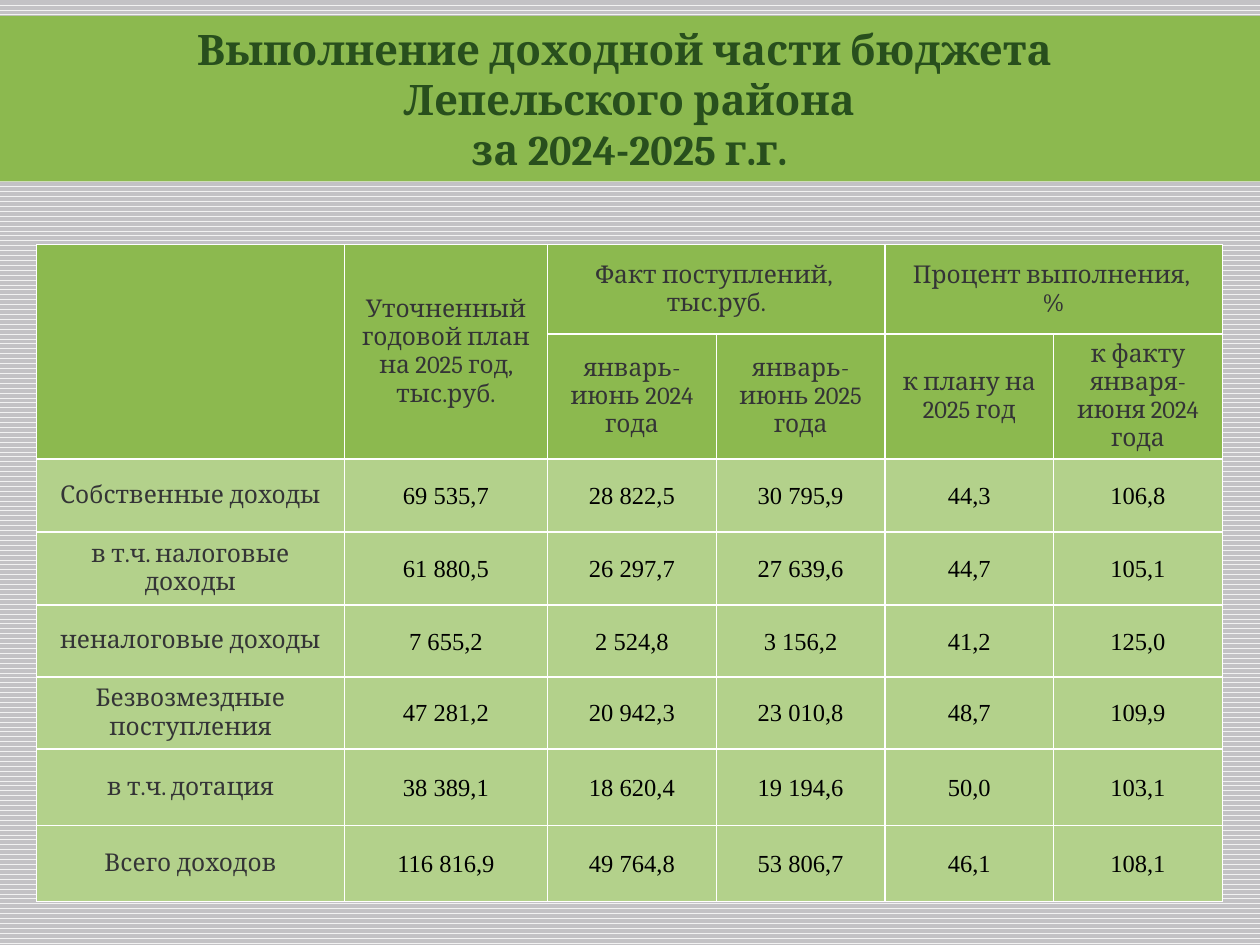
from pptx import Presentation
from pptx.dml.color import RGBColor
from pptx.enum.dml import MSO_PATTERN
from pptx.enum.shapes import MSO_SHAPE
from pptx.enum.text import MSO_ANCHOR, PP_ALIGN
from pptx.oxml import parse_xml
from pptx.oxml.ns import nsdecls
from pptx.util import Cm, Pt

GREEN = RGBColor(0x8C, 0xB9, 0x4F)
LIGHT_GREEN = RGBColor(0xB3, 0xD1, 0x8B)
DARK_GREEN = RGBColor(0x28, 0x4F, 0x1D)
GRAPHITE = RGBColor(0x34, 0x34, 0x36)
BLACK = RGBColor(0, 0, 0)
WHITE = RGBColor(0xFF, 0xFF, 0xFF)
PALE_GREY = RGBColor(0xF2, 0xF2, 0xF2)
GREY = RGBColor(0xC3, 0xC2, 0xC5)

TITLE_FONT = {"name": "Cambria", "size": Pt(24), "bold": True}
LABEL_FONT = {"name": "Cambria", "size": Pt(14), "bold": False}
NUMBER_FONT = {"name": "Times New Roman", "size": Pt(14), "bold": False}
NUMBER_MARGINS = {
    "margin_left": Cm(0.03),
    "margin_top": Cm(0.03),
    "margin_right": Cm(0.03),
    "margin_bottom": Cm(0),
}

TITLE = "Выполнение доходной части бюджета \nЛепельского района\nза 2024-2025 г.г."
HEADINGS = [
    (0, 0, 1, 0, ""),
    (0, 1, 1, 1, "Уточненный годовой план на 2025 год, тыс.руб."),
    (0, 2, 0, 3, "Факт поступлений, \nтыс.руб."),
    (0, 4, 0, 5, "Процент выполнения, \n%"),
    (1, 2, 1, 2, "январь-июнь 2024 года"),
    (1, 3, 1, 3, "январь-июнь 2025 года"),
    (1, 4, 1, 4, "к плану на 2025 год"),
    (1, 5, 1, 5, "к факту января-июня 2024 года"),
]
INCOME = [
    ("Собственные доходы", "69 535,7", "28 822,5", "30 795,9", "44,3", "106,8"),
    ("в т.ч. налоговые доходы", "61 880,5", "26 297,7", "27 639,6", "44,7", "105,1"),
    ("неналоговые доходы", "7 655,2", "2 524,8", "3 156,2", "41,2", "125,0"),
    ("Безвозмездные поступления", "47 281,2", "20 942,3", "23 010,8", "48,7", "109,9"),
    ("в т.ч. дотация", "38 389,1", "18 620,4", "19 194,6", "50,0", "103,1"),
    ("Всего доходов", "116 816,9", "49 764,8", "53 806,7", "46,1", "108,1"),
]
COLUMN_WIDTHS = [6.2, 4.1] + [3.4] * 4
ROW_HEIGHTS = [1.8, 2.39, 1.47, 1.47, 1.45, 1.45, 1.54, 1.54]


def apply(target, values):
    for key, value in values.items():
        setattr(target, key, value)


def write(frame, text, font, color):
    frame.text = text
    for paragraph in frame.paragraphs:
        paragraph.alignment = PP_ALIGN.CENTER
        for run in paragraph.runs:
            apply(run.font, font)
            run.font.color.rgb = color


def add_borders(cell):
    properties = cell._tc.get_or_add_tcPr()
    for position, side in enumerate(("lnL", "lnR", "lnT", "lnB")):
        border = parse_xml(
            f'<a:{side} {nsdecls("a")} w="{Pt(1)}"><a:solidFill>'
            f'<a:srgbClr val="{WHITE}"/></a:solidFill></a:{side}>'
        )
        properties.insert(position, border)


def add_background(slide):
    fill = slide.background.fill
    fill.patterned()
    fill.pattern = MSO_PATTERN.WAVE
    fill.fore_color.rgb = PALE_GREY
    fill.back_color.rgb = GREY


def add_title(slide, left, top, width, height):
    banner = slide.shapes.add_shape(MSO_SHAPE.RECTANGLE, left, top, width, height)
    banner.shadow.inherit = False
    banner.fill.solid()
    banner.fill.fore_color.rgb = GREEN
    banner.line.fill.background()
    banner.text_frame.word_wrap = True
    write(banner.text_frame, TITLE, TITLE_FONT, DARK_GREEN)


def add_income_table(slide, left, top, width, height):
    table = slide.shapes.add_table(
        len(ROW_HEIGHTS), len(COLUMN_WIDTHS), left, top, width, height
    ).table
    for column, share in zip(table.columns, COLUMN_WIDTHS):
        column.width = int(width * share / sum(COLUMN_WIDTHS))
    for row, share in zip(table.rows, ROW_HEIGHTS):
        row.height = int(height * share / sum(ROW_HEIGHTS))

    for cell in table.iter_cells():
        cell.fill.solid()
        cell.fill.fore_color.rgb = GREEN
        cell.vertical_anchor = MSO_ANCHOR.MIDDLE
        add_borders(cell)

    for row, column, last_row, last_column, heading in HEADINGS:
        cell = table.cell(row, column)
        if (row, column) != (last_row, last_column):
            cell.merge(table.cell(last_row, last_column))
        write(cell.text_frame, heading, LABEL_FONT, GRAPHITE)

    for row, (label, *amounts) in enumerate(INCOME, start=2):
        write(table.cell(row, 0).text_frame, label, LABEL_FONT, GRAPHITE)
        for column, amount in enumerate(amounts, start=1):
            cell = table.cell(row, column)
            apply(cell, NUMBER_MARGINS)
            write(cell.text_frame, amount, NUMBER_FONT, BLACK)
        for column in range(len(COLUMN_WIDTHS)):
            table.cell(row, column).fill.fore_color.rgb = LIGHT_GREEN


def main():
    presentation = Presentation()
    presentation.slide_width = Cm(25.4)
    presentation.slide_height = Cm(19.05)
    slide = presentation.slides.add_slide(presentation.slide_layouts[6])
    add_background(slide)
    add_title(slide, Cm(-0.03), Cm(0.32), Cm(25.43), Cm(3.34))
    add_income_table(slide, Cm(0.74), Cm(4.93), Cm(23.9), Cm(13.11))
    presentation.save("out.pptx")


if __name__ == "__main__":
    main()
